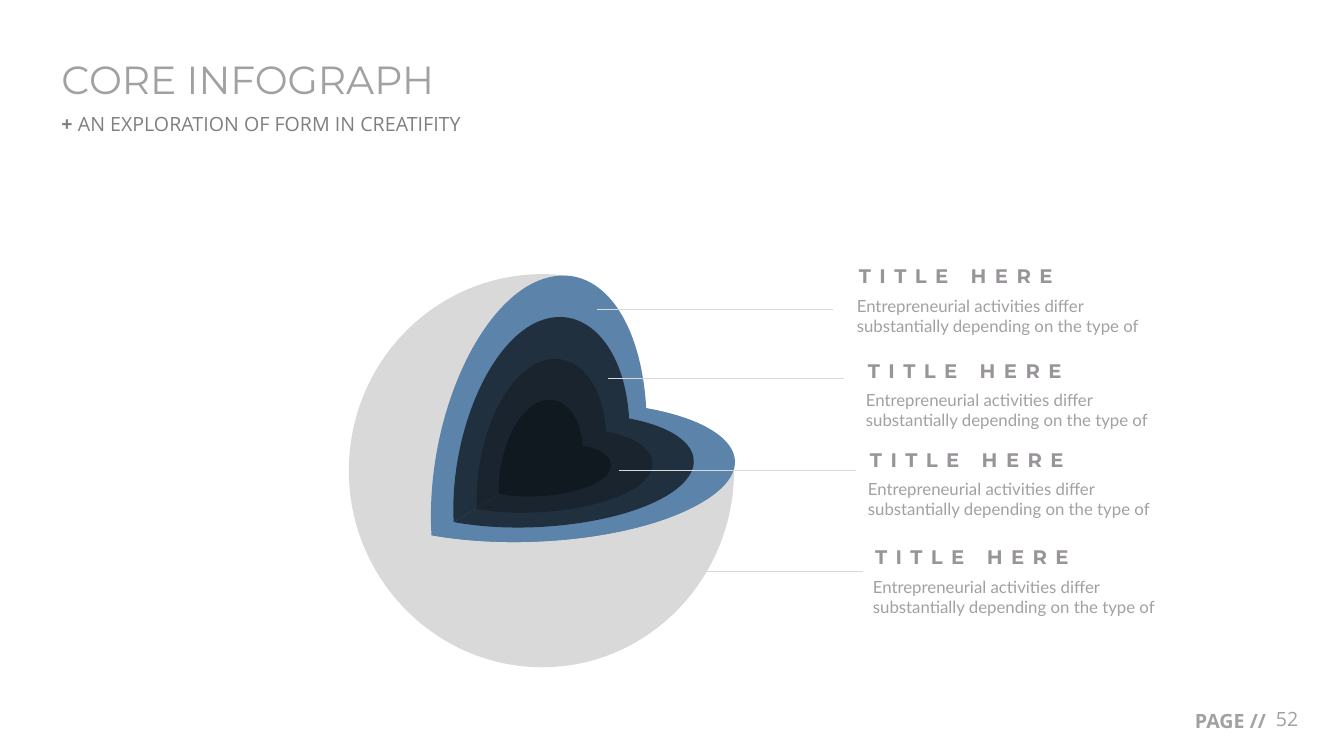
from dataclasses import dataclass

from lxml import etree
from pptx import Presentation
from pptx import util as u
from pptx.dml.color import RGBColor
from pptx.enum import shapes, text
from pptx.oxml.ns import qn


@dataclass(frozen=True)
class Theme:
    heading_font: str = "Montserrat"
    label_font: str = "Open Sans"
    copy_font: str = "Lato"
    grey: str = "A1A1A1"
    dark_grey: str = "808080"
    caption_grey: str = "999499"
    pale: str = "D9D9D9"
    layers: tuple = ("5C83AA", "21303F", "19242F", "101820")
    title_size: int = 28
    label_size: int = 14
    copy_size: int = 12
    leader_width: float = 0.5
    caption_tracking: int = 600


@dataclass(frozen=True)
class Box:
    left: float
    top: float
    width: float
    height: float

    def emu(self):
        return [u.Inches(v) for v in (self.left, self.top, self.width, self.height)]


THEME = Theme()

# Sphere outlines: a start point, then three points per curve, on a fine grid
GRID_LEFT, GRID_TOP, GRID_WIDTH = 346, 249, 410
GLOBE = [(728, 456), (728, 456), (627, 414), (627, 414),
         (620, 390), (608, 310), (571, 275), (560, 273), (549, 272), (538, 272),
         (432, 272), (346, 359), (346, 467), (346, 574), (432, 662), (538, 662),
         (643, 662), (728, 574), (728, 467), (728, 463), (728, 459), (728, 456)]
HEARTS = [
    [(641, 405), (635, 303), (583, 249), (523, 284), (465, 319), (422, 429), (428, 531),
     (518, 547), (637, 534), (696, 498), (755, 463), (730, 421), (641, 405)],
    [(624, 415), (619, 335), (572, 296), (526, 323), (480, 350), (446, 438), (450, 518),
     (521, 531), (615, 519), (661, 492), (708, 464), (694, 428), (624, 415)],
    [(601, 430), (599, 371), (562, 342), (528, 363), (494, 383), (470, 447), (473, 505),
     (524, 515), (594, 507), (628, 487), (662, 466), (653, 439), (601, 430)],
    [(578, 442), (575, 405), (552, 388), (530, 401), (509, 414), (493, 454), (495, 491),
     (528, 497), (571, 492), (593, 479), (615, 466), (610, 448), (578, 442)],
]
LOBES = [
    [(697, 498), (637, 534), (518, 547), (428, 531), (641, 405), (641, 405), (641, 405),
     (731, 421), (756, 463), (697, 498)],
    [(661, 492), (614, 520), (520, 531), (450, 518), (623, 415), (623, 415), (623, 415),
     (693, 428), (708, 464), (661, 492)],
    [(627, 486), (593, 506), (523, 514), (472, 505), (601, 428), (601, 428), (601, 428),
     (652, 438), (661, 466), (627, 486)],
    [(593, 478), (570, 491), (527, 496), (495, 490), (577, 442), (577, 442), (577, 442),
     (610, 448), (614, 466), (593, 478)],
]

# Callouts: text left and top, then leader start, end and height
CALLOUTS = [
    (8.40, 2.57, 5.92, 8.26, 3.07),
    (8.49, 3.51, 6.03, 8.37, 3.75),
    (8.51, 4.39, 6.14, 8.49, 4.67),
    (8.56, 5.36, 5.02, 8.56, 5.67),
]
CAPTION = "TITLE HERE"
DESCRIPTION = "Entrepreneurial activities differ substantially depending on the type of"


def add_run(paragraph, wording, font, size, colour, bold=False):
    run = paragraph.add_run()
    run.text = wording
    run.font.name = font
    run.font.size = u.Pt(size)
    run.font.bold = bold
    run.font.color.rgb = RGBColor.from_string(colour)
    return run


def add_label(parent, box, wording, font, size, colour, bold=False, wrap=True, centred=False):
    label = parent.add_textbox(*box.emu())
    label.text_frame.word_wrap = wrap
    paragraph = label.text_frame.paragraphs[0]
    paragraph.alignment = text.PP_ALIGN.CENTER if centred else text.PP_ALIGN.LEFT
    return add_run(paragraph, wording, font, size, colour, bold)


def place_heading(placeholder, box, anchor):
    placeholder.left, placeholder.top, placeholder.width, placeholder.height = box.emu()
    frame = placeholder.text_frame
    frame.vertical_anchor = anchor
    frame.auto_size = text.MSO_AUTO_SIZE.NONE
    paragraph = frame.paragraphs[0]
    paragraph.alignment = text.PP_ALIGN.LEFT
    paragraph.line_spacing = 0.9
    return paragraph


def draw_header(slide, box):
    title_height = 0.62
    title = place_heading(slide.shapes.title, Box(box.left, box.top, box.width, title_height),
                          text.MSO_ANCHOR.MIDDLE)
    add_run(title, "CORE INFOGRAPH", THEME.heading_font, THEME.title_size, THEME.grey)

    subtitle_box = Box(box.left, box.top + 0.59, box.width, box.height - 0.59)
    subtitle = place_heading(slide.placeholders[1], subtitle_box, text.MSO_ANCHOR.TOP)
    subtitle.space_before = u.Pt(10)
    for wording, bold in (("+", True), (" AN EXPLORATION OF FORM IN CREATIFITY", False)):
        add_run(subtitle, wording, THEME.label_font, THEME.label_size, THEME.dark_grey, bold)


def add_outline(parent, box, points, colour):
    scale = u.Inches(box.width) / GRID_WIDTH
    builder = parent.build_freeform(*points[0], scale=scale)
    builder.add_line_segments(points[1:], close=True)
    outline = builder.convert_to_shape(
        round(u.Inches(box.left) - GRID_LEFT * scale),
        round(u.Inches(box.top) - GRID_TOP * scale))
    # Turn every three segments into one cubic curve
    segments = list(outline._element.iter(qn("a:lnTo")))
    for first in range(0, len(segments), 3):
        curve = etree.Element(qn("a:cubicBezTo"))
        segments[first].addprevious(curve)
        for segment in segments[first:first + 3]:
            curve.append(segment[0])
            segment.getparent().remove(segment)
    outline.shadow.inherit = False
    outline.fill.solid()
    outline.fill.fore_color.rgb = RGBColor.from_string(colour)
    outline.line.fill.background()


def draw_sphere(slide, box):
    sphere = slide.shapes.add_group_shape().shapes
    add_outline(sphere, box, GLOBE, THEME.pale)
    for layer_set in (HEARTS, LOBES):
        for points, colour in zip(layer_set, THEME.layers):
            add_outline(sphere, box, points, colour)


def draw_leader(slide, start, end, height):
    leader = slide.shapes.add_connector(
        shapes.MSO_CONNECTOR.STRAIGHT,
        *(u.Inches(v) for v in (start, height, end, height)))
    leader.line.color.rgb = RGBColor.from_string(THEME.pale)
    leader.line.width = u.Pt(THEME.leader_width)
    etree.SubElement(leader._element.spPr, qn("a:effectLst"))


def draw_callout(slide, box):
    callout = slide.shapes.add_group_shape().shapes
    add_label(callout, Box(box.left, box.top + 0.31, box.width, box.height - 0.31),
              DESCRIPTION, THEME.copy_font, THEME.copy_size, THEME.grey)
    caption = add_label(callout, Box(box.left + 0.02, box.top, 2.19, 0.34), CAPTION,
                        THEME.heading_font, THEME.label_size, THEME.caption_grey,
                        bold=True, wrap=False)
    caption._r.get_or_add_rPr().set("spc", str(THEME.caption_tracking))


def draw_page_number(slide, box):
    style = (THEME.label_font, THEME.label_size, THEME.grey)
    add_label(slide.shapes, Box(box.left + 0.66, box.top, 0.71, 0.34), "52", *style,
              centred=True)
    add_label(slide.shapes, Box(box.left, box.top + 0.02, 0.96, 0.34), "PAGE // ", *style,
              bold=True, wrap=False, centred=True)


def main():
    deck = Presentation()
    deck.slide_width, deck.slide_height = u.Inches(13.33), u.Inches(7.5)
    slide = deck.slides.add_slide(deck.slide_layouts[2])
    draw_page_number(slide, Box(11.75, 6.96, 1.37, 0.36))
    draw_header(slide, Box(0.51, 0.5, 12.42, 1.07))
    draw_sphere(slide, Box(3.46, 2.49, 4.1, 4.13))
    for _, _, start, end, height in CALLOUTS:
        draw_leader(slide, start, end, height)
    for left, top, *_ in CALLOUTS:
        draw_callout(slide, Box(left, top, 3.27, 0.81))
    deck.save("out.pptx")


if __name__ == "__main__":
    main()
